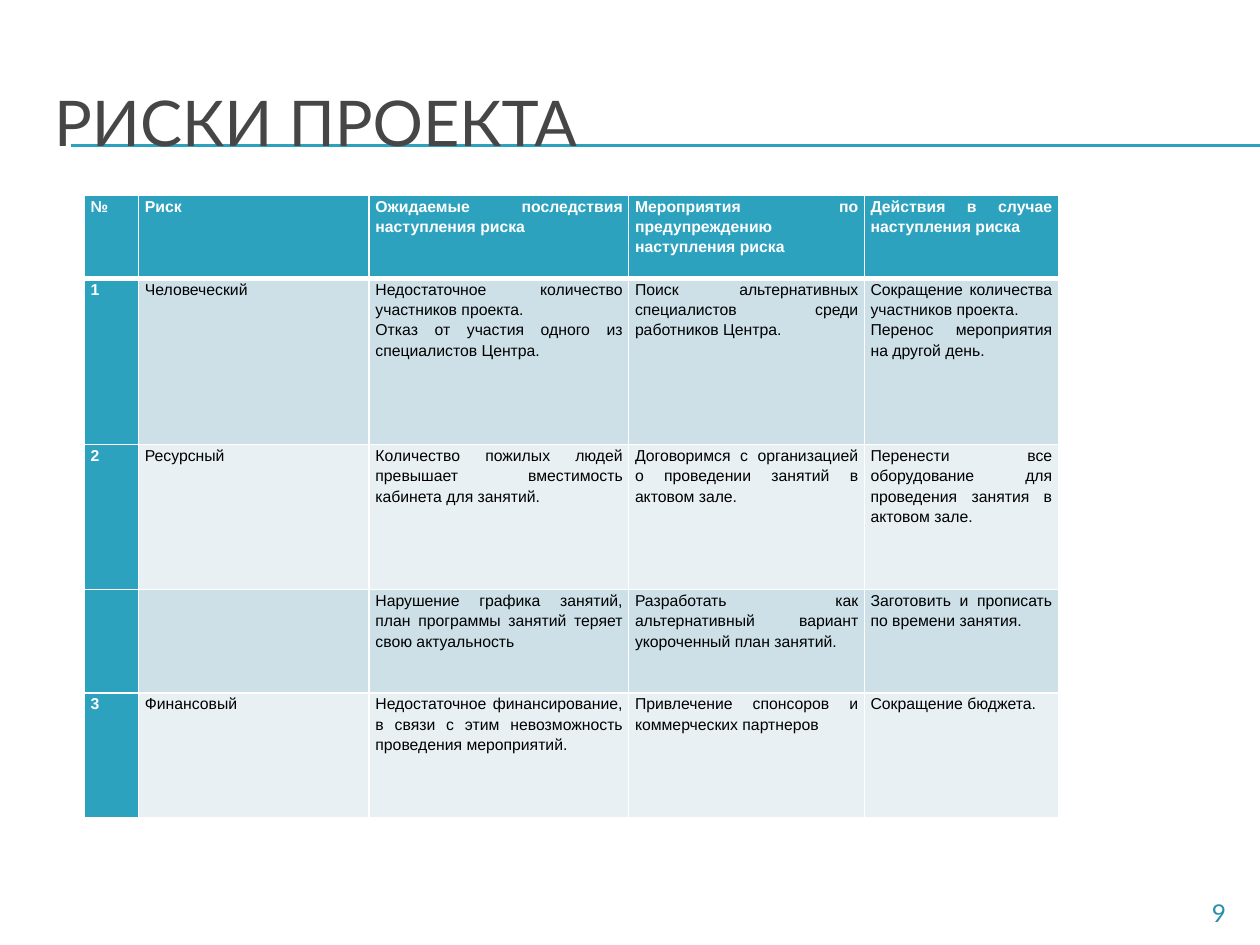
from lxml.etree import SubElement
from pptx import Presentation
from pptx.dml.color import RGBColor
from pptx.enum.shapes import MSO_CONNECTOR
from pptx.enum.text import MSO_ANCHOR, PP_ALIGN
from pptx.oxml import parse_xml
from pptx.oxml.ns import nsdecls, qn
from pptx.util import Inches, Pt

COLORS = {
    "accent": "2DA2BF", "title": "464646", "number": "288FA9", "white": "FFFFFF",
    "black": "000000", "band_dark": "CDE0E8", "band_light": "E8F0F4",
}


def write_text(frame, text, size, color, font="Lato", bold=False,
               align=PP_ALIGN.LEFT, spacing=None):
    """Fill a text frame, one paragraph per line of text."""
    frame.word_wrap = True
    frame.text = text
    for paragraph in frame.paragraphs:
        paragraph.alignment = align
        paragraph.line_spacing = spacing
        paragraph.font.size = Pt(size)
        for run in paragraph.runs:
            run.font.name = font
            run.font.size = Pt(size)
            run.font.bold = bold
            run.font.color.rgb = RGBColor.from_string(COLORS[color])


def set_borders(cell, bottom=1):
    """Draw white borders round a cell; they come before the fill in the XML."""
    properties = cell._tc.get_or_add_tcPr()
    for index, (side, width) in enumerate([("L", 1), ("R", 1), ("T", 1), ("B", bottom)]):
        properties.insert(index, parse_xml(
            f'<a:ln{side} {nsdecls("a")} w="{Pt(width)}"><a:solidFill>'
            f'<a:srgbClr val="{COLORS["white"]}"/></a:solidFill></a:ln{side}>'))


presentation = Presentation()
presentation.slide_width = Inches(10)
presentation.slide_height = Inches(7.5)
slide = presentation.slides.add_slide(presentation.slide_layouts[5])

# Title
title = slide.shapes.title
title.left, title.top = Inches(0.33), Inches(0.5)
title.width, title.height = Inches(9.5), Inches(0.92)
title.text_frame.vertical_anchor = MSO_ANCHOR.MIDDLE
write_text(title.text_frame, "РИСКИ ПРОЕКТА", 36, "title")

# Double rule behind the title
for y in (1.15, 1.16):
    rule = slide.shapes.add_connector(
        MSO_CONNECTOR.STRAIGHT, Inches(0.56), Inches(y), Inches(10), Inches(y))
    rule.line.color.rgb = RGBColor.from_string(COLORS["accent"])
    rule.line.width = Pt(0.75)
    SubElement(rule._element.spPr, qn("a:effectLst"))
    title._element.addprevious(rule._element)

# Slide number
number = slide.shapes.add_textbox(Inches(0.51), Inches(7.08), Inches(9.32), Inches(0.27))
write_text(number.text_frame, "9", 14, "number", align=PP_ALIGN.RIGHT)

# Risk table
column_widths = [0.43, 1.83, 2.06, 1.87, 1.54]
row_heights = [0.66, 1.32, 1.15, 0.82, 0.99]
risks = [
    ["№", "Риск", "Ожидаемые последствия наступления риска",
     "Мероприятия по предупреждению наступления риска",
     "Действия в случае наступления риска"],
    ["1", "Человеческий",
     "Недостаточное количество участников проекта.\n"
     "Отказ от участия одного из специалистов Центра.",
     "Поиск альтернативных специалистов среди работников Центра.",
     "Сокращение количества участников проекта.\nПеренос мероприятия на другой день."],
    ["2", "Ресурсный",
     "Количество пожилых людей превышает вместимость кабинета для занятий.",
     "Договоримся с организацией о проведении занятий в актовом зале.",
     "Перенести все оборудование для проведения занятия в актовом зале."],
    ["", "", "Нарушение графика занятий, план программы занятий теряет свою актуальность",
     "Разработать как альтернативный вариант укороченный план занятий.",
     "Заготовить и прописать по времени занятия."],
    ["3", "Финансовый",
     "Недостаточное финансирование, в связи с этим невозможность проведения мероприятий.",
     "Привлечение спонсоров и коммерческих партнеров", "Сокращение бюджета."],
]
table = slide.shapes.add_table(
    len(risks), len(column_widths), Inches(0.67), Inches(1.55),
    Inches(sum(column_widths)), Inches(sum(row_heights))).table
table.first_col = True
for column, width in zip(table.columns, column_widths):
    column.width = Inches(width)
for row, height in zip(table.rows, row_heights):
    row.height = Inches(height)

for row_index, texts in enumerate(risks):
    band = "band_dark" if row_index % 2 else "band_light"
    for column_index, text in enumerate(texts):
        cell = table.cell(row_index, column_index)
        heading = row_index == 0 or column_index == 0
        cell.margin_left = cell.margin_right = Inches(0.05)
        cell.margin_top = cell.margin_bottom = 0
        cell.fill.solid()
        cell.fill.fore_color.rgb = RGBColor.from_string(COLORS["accent" if heading else band])
        set_borders(cell, bottom=3 if row_index == 0 else 1)
        write_text(cell.text_frame, text, 9, "white" if heading else "black",
                   font="Arial", bold=heading, align=PP_ALIGN.JUSTIFY, spacing=1.15)

presentation.save("out.pptx")
